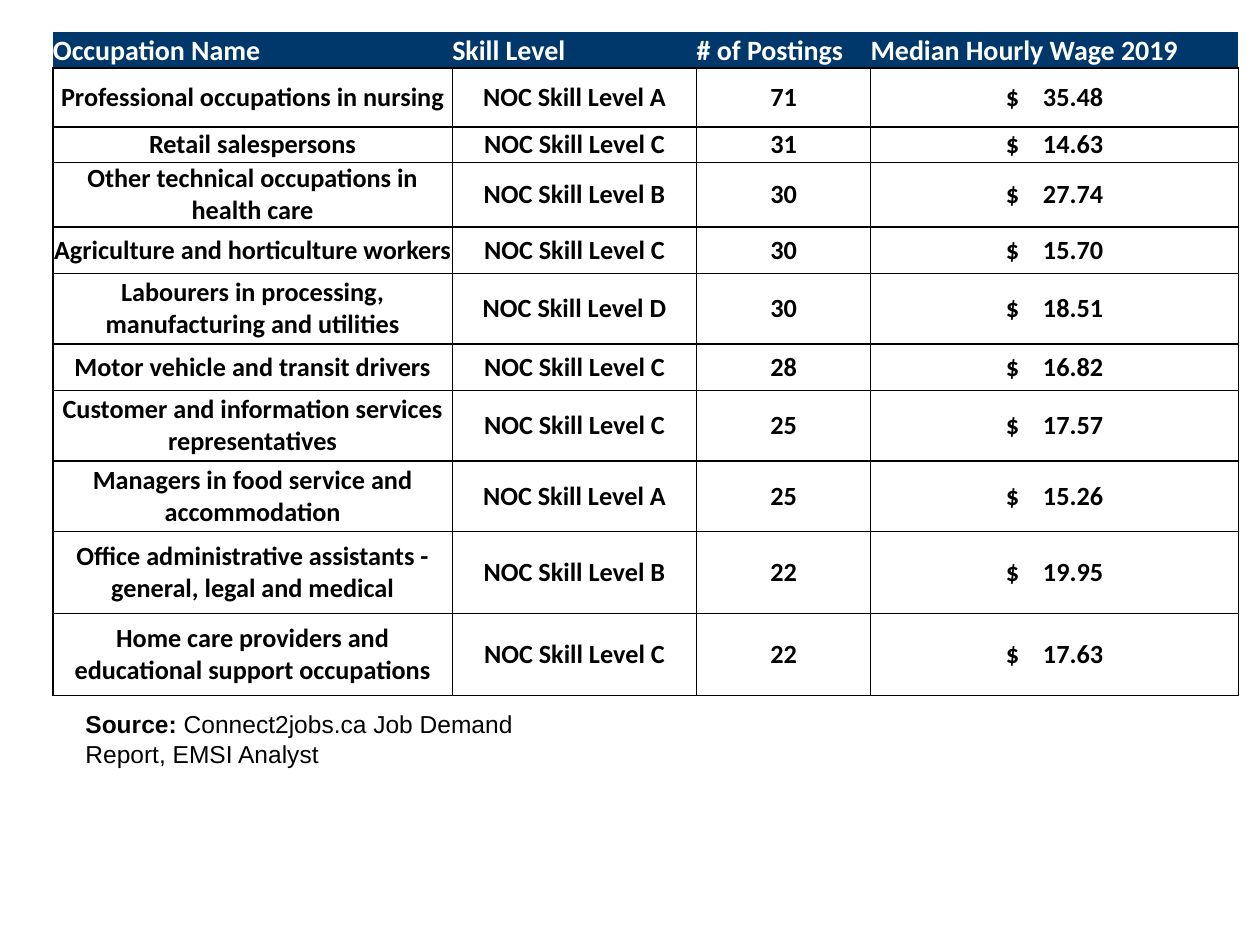
"""Build a slide with a table of the most posted occupations and their wages."""
from lxml.etree import SubElement
from pptx import Presentation
from pptx.dml.color import RGBColor
from pptx.enum.text import MSO_ANCHOR, MSO_AUTO_SIZE, PP_ALIGN
from pptx.oxml.ns import qn
from pptx.util import Inches, Pt

NAVY, WHITE, BLACK = "00386B", "FFFFFF", "000000"
HEADERS = ["Occupation Name", "Skill Level", "# of Postings", "Median Hourly Wage 2019"]
OCCUPATIONS = [
    ("Professional occupations in nursing", "A", 71, 35.48, 0.47),
    ("Retail salespersons", "C", 31, 14.63, 0.28),
    ("Other technical occupations in health care", "B", 30, 27.74, 0.51),
    ("Agriculture and horticulture workers", "C", 30, 15.70, 0.37),
    ("Labourers in processing, manufacturing and utilities", "D", 30, 18.51, 0.56),
    ("Motor vehicle and transit drivers", "C", 28, 16.82, 0.37),
    ("Customer and information services representatives", "C", 25, 17.57, 0.56),
    ("Managers in food service and accommodation", "A", 25, 15.26, 0.56),
    ("Office administrative assistants - general, legal and medical", "B", 22, 19.95, 0.65),
    ("Home care providers and educational support occupations", "C", 22, 17.63, 0.65),
]
SOURCE = [("Source: ", True), ("Connect2jobs.ca Job Demand Report, EMSI Analyst", False)]
COLUMN_WIDTHS = [3.17, 1.94, 1.38, 2.92]
HEADER_HEIGHT = 0.29
CURRENCY_SPACING = 5.1


def color(value):
    return RGBColor.from_string(value)


def set_font(font, name, size, value):
    font.name, font.size = name, Pt(size)
    font.color.rgb = color(value)


def set_borders(cell, visible_sides):
    properties = cell._tc.get_or_add_tcPr()
    for side in "LRTB":
        line = SubElement(properties, qn(f"a:ln{side}"), w=str(Pt(1)))
        if side in visible_sides:
            fill = SubElement(line, qn("a:solidFill"))
            SubElement(fill, qn("a:srgbClr"), val=BLACK)
        else:
            SubElement(line, qn("a:noFill"))


def format_cell(cell, is_header):
    cell.margin_left = cell.margin_right = cell.margin_top = cell.margin_bottom = 0
    cell.vertical_anchor = MSO_ANCHOR.BOTTOM if is_header else MSO_ANCHOR.MIDDLE
    set_borders(cell, "B" if is_header else "LRTB")
    paragraph = cell.text_frame.paragraphs[0]
    paragraph.alignment = PP_ALIGN.LEFT if is_header else PP_ALIGN.CENTER
    paragraph.font.bold = True
    set_font(paragraph.font, "Calibri", 16 if is_header else 15, WHITE if is_header else BLACK)
    if is_header:
        cell.fill.solid()
        cell.fill.fore_color.rgb = color(NAVY)
    else:
        cell.fill.background()


def write_wage(cell, wage):
    paragraph = cell.text_frame.paragraphs[0]
    currency = paragraph.add_run()
    currency.text = "$ "
    currency._r.get_or_add_rPr().set("spc", str(round(CURRENCY_SPACING * 100)))
    paragraph.add_run().text = f"{wage:.2f}"


def add_occupation_table(slide):
    heights = [HEADER_HEIGHT] + [occupation[-1] for occupation in OCCUPATIONS]
    table = slide.shapes.add_table(
        len(heights), len(HEADERS), Inches(0.42), Inches(0.25),
        Inches(sum(COLUMN_WIDTHS)), Inches(sum(heights))).table
    table.horz_banding = False
    for column, width in zip(table.columns, COLUMN_WIDTHS):
        column.width = Inches(width)
    for row, height in zip(table.rows, heights):
        row.height = Inches(height)
    for index, header in enumerate(HEADERS):
        table.cell(0, index).text = header
    for index, (name, level, postings, wage, _) in enumerate(OCCUPATIONS, 1):
        for column, text in enumerate((name, f"NOC Skill Level {level}", str(postings))):
            table.cell(index, column).text = text
        write_wage(table.cell(index, 3), wage)
    for index, row in enumerate(table.rows):
        for cell in row.cells:
            format_cell(cell, index == 0)


def add_source(slide):
    box = slide.shapes.add_textbox(Inches(0.58), Inches(5.58), Inches(4.17), Inches(0.57))
    frame = box.text_frame
    frame.word_wrap = True
    frame.auto_size = MSO_AUTO_SIZE.SHAPE_TO_FIT_TEXT
    paragraph = frame.paragraphs[0]
    set_font(paragraph.font, "Arial", 14, BLACK)
    for text, bold in SOURCE:
        run = paragraph.add_run()
        run.text, run.font.bold = text, bold


def main():
    presentation = Presentation()
    presentation.slide_width, presentation.slide_height = Inches(10), Inches(7.5)
    slide = presentation.slides.add_slide(presentation.slide_layouts[6])
    add_occupation_table(slide)
    add_source(slide)
    presentation.save("out.pptx")


if __name__ == "__main__":
    main()
